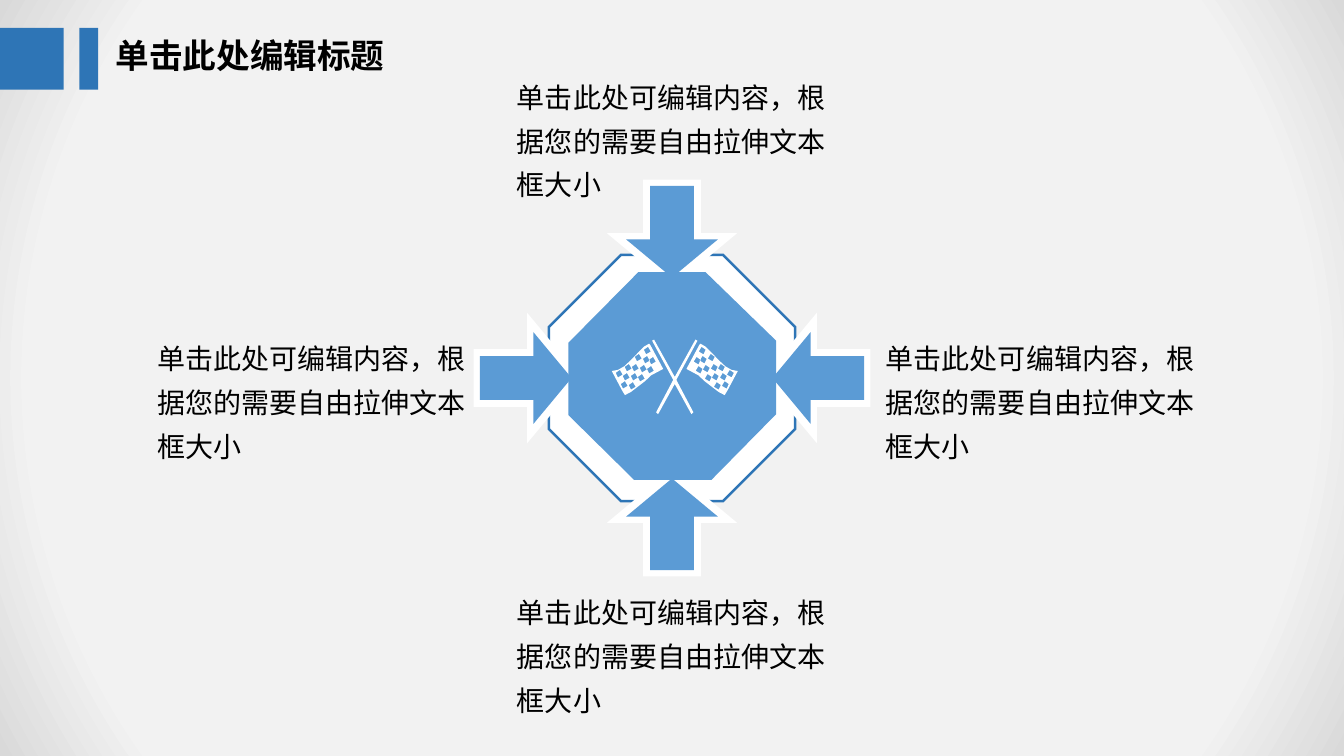
from math import cos, radians, sin

from lxml.etree import SubElement
from pptx import Presentation
from pptx.dml.color import RGBColor
from pptx.enum.shapes import MSO_SHAPE
from pptx.enum.text import MSO_ANCHOR, MSO_AUTO_SIZE
from pptx.oxml.ns import qn
from pptx.util import Pt

DARK_BLUE = RGBColor(0x2E, 0x75, 0xB6)
BLUE = RGBColor(0x5B, 0x9B, 0xD5)
WHITE = RGBColor(0xFF, 0xFF, 0xFF)
BLACK = RGBColor(0x00, 0x00, 0x00)
PALE_GREY = RGBColor(0xF2, 0xF2, 0xF2)
GREY = RGBColor(0xD9, 0xD9, 0xD9)

TITLE = "单击此处编辑标题"
BODY = "单击此处可编辑内容，根据您的需要自由拉伸文本框大小"

CENTER_X, CENTER_Y = 480, 270
ARROW_SIZE, ARROW_DISTANCE = 65.5, 104
FLAGS_X = 482

# Outlines in points; the flag parts count x from the middle of the crossed poles
HUB = [(456, 194.4), (504, 194.4), (554.4, 243.4), (554.4, 295.9),
       (508.3, 342.7), (452.9, 342.7), (406.1, 296.6), (406.1, 244.8)]
POLES = [(16.2, 243.4), (14.8, 242.6), (0, 269.3), (-14.8, 242.6),
         (-16.2, 243.4), (-1.1, 271.4), (-13.3, 294.5), (-11.9, 295.9),
         (0, 274.3), (11.9, 295.9), (13.3, 294.5), (1.1, 271.4)]
FLAG = [(17.6, 246.2), (18.4, 245.5), (22, 247.6), (32, 257.8), (36.1, 261.6),
        (40.5, 264.2), (45, 265), (37.8, 278.6), (35.6, 282.2), (31.2, 279.9),
        (21.2, 272.2), (16.9, 268.1), (8.3, 263.5)]
CHECK = [(0, 0), (3, 2.1), (1.4, 5.4), (-2, 3.4)]
CHECK_TOPS = [(32.8, 259.9), (34.2, 266.4), (25.6, 252.7), (27.7, 259.9),
              (19.8, 254.2), (19.1, 247.7), (15.5, 254.9), (16.9, 261.4),
              (22, 260.6), (23.4, 267.1), (28.4, 266.4), (29.9, 272.9),
              (35.6, 272.2), (39.2, 264.2)]


def paint(shape, fill, line=None, line_width=0):
    shape.shadow.inherit = False
    shape.fill.solid()
    shape.fill.fore_color.rgb = fill
    if line is None:
        shape.line.fill.background()
    else:
        shape.line.color.rgb = line
        shape.line.width = Pt(line_width)
        SubElement(shape.line._get_or_add_ln(), qn("a:miter"), lim="800000")


def add_preset(slide, kind, left, top, width, height, fill, adjustments=(), **line):
    shape = slide.shapes.add_shape(kind, Pt(left), Pt(top), Pt(width), Pt(height))
    for index, value in enumerate(adjustments):
        shape.adjustments[index] = value
    paint(shape, fill, **line)
    return shape


def add_outline(slide, contours, fill, middle=0, side=1):
    """Draw closed contours as one shape; side=-1 mirrors them about middle."""
    builder = None
    for contour in contours:
        points = [(Pt(middle + side * x), Pt(y)) for x, y in contour]
        if builder is None:
            builder = slide.shapes.build_freeform(*points[0])
        else:
            builder.move_to(*points[0])
        builder.add_line_segments(points[1:], close=True)
    paint(builder.convert_to_shape(), fill)


def add_text(slide, text, left, top, width, height, *, size, font, spacing,
             bold=False, before=0, anchor=MSO_ANCHOR.TOP, auto_size=MSO_AUTO_SIZE.NONE):
    frame = slide.shapes.add_textbox(Pt(left), Pt(top), Pt(width), Pt(height)).text_frame
    frame.word_wrap = True
    frame.auto_size = auto_size
    frame.vertical_anchor = anchor
    paragraph = frame.paragraphs[0]
    paragraph.line_spacing = spacing
    paragraph.space_before = Pt(before)
    run = paragraph.add_run()
    run.text = text
    run.font.size = Pt(size)
    run.font.bold = bold
    run.font.color.rgb = BLACK
    run.font.name = font
    SubElement(run._r.get_or_add_rPr(), qn("a:ea"), typeface=font)


def add_arrow(slide, angle, distance, **line):
    """Place an arrow pointing at the hub; angle 0 is below it, clockwise."""
    center_x = CENTER_X - distance * sin(radians(angle))
    center_y = CENTER_Y + distance * cos(radians(angle))
    arrow = add_preset(slide, MSO_SHAPE.UP_ARROW, center_x - ARROW_SIZE / 2,
                       center_y - ARROW_SIZE / 2, ARROW_SIZE, ARROW_SIZE, BLUE,
                       adjustments=(0.479, 0.416), **line)
    arrow.rotation = angle


def set_background(slide):
    fill = slide.background.fill
    fill.gradient()
    for stop, color, position in zip(fill.gradient_stops, (PALE_GREY, GREY), (0.83, 1)):
        stop.color.rgb = color
        stop.position = position
    gradient = slide._element.find(".//" + qn("a:gradFill"))
    gradient.remove(gradient.find(qn("a:lin")))
    circle = SubElement(gradient, qn("a:path"), path="circle")
    SubElement(circle, qn("a:fillToRect"), l="50000", t="50000", r="50000", b="50000")


def main():
    deck = Presentation()
    deck.slide_width, deck.slide_height = Pt(960), Pt(540)
    slide = deck.slides.add_slide(deck.slide_layouts[6])
    set_background(slide)

    # Ring and the four arrows: white-edged, then plain on top
    add_preset(slide, MSO_SHAPE.OCTAGON, CENTER_X - 88, CENTER_Y - 88, 176, 176, WHITE,
               adjustments=(0.293,), line=DARK_BLUE, line_width=1.75)
    for angle in (270, 90, 0, 180):
        add_arrow(slide, angle, ARROW_DISTANCE, line=WHITE, line_width=10)
        add_arrow(slide, angle, ARROW_DISTANCE + 0.5)

    # Texts above, right, left and below
    for left, top in ((362.2, 46.8), (625.7, 233.3), (105.1, 233.3), (362.2, 414.7)):
        add_text(slide, BODY, left, top, 247, 101.5, size=20, font="Calibri",
                 spacing=1.3, before=4, auto_size=MSO_AUTO_SIZE.SHAPE_TO_FIT_TEXT)

    # Hub with crossed flags
    add_outline(slide, [HUB], BLUE)
    add_outline(slide, [POLES], WHITE, middle=FLAGS_X)
    checks = [[(x + dx, y + dy) for dx, dy in CHECK] for x, y in CHECK_TOPS]
    for side in (1, -1):
        add_outline(slide, [FLAG] + checks, WHITE, middle=FLAGS_X, side=side)

    # Title with its two bars
    for left, width in ((0, 45.5), (56.7, 13.5)):
        add_preset(slide, MSO_SHAPE.RECTANGLE, left, 20, width, 44, DARK_BLUE)
    add_text(slide, TITLE, 75.6, 26, 214, 31, size=24, font="Noto Sans CJK SC",
             spacing=0.9, bold=True, anchor=MSO_ANCHOR.MIDDLE)

    deck.save("out.pptx")


if __name__ == "__main__":
    main()
